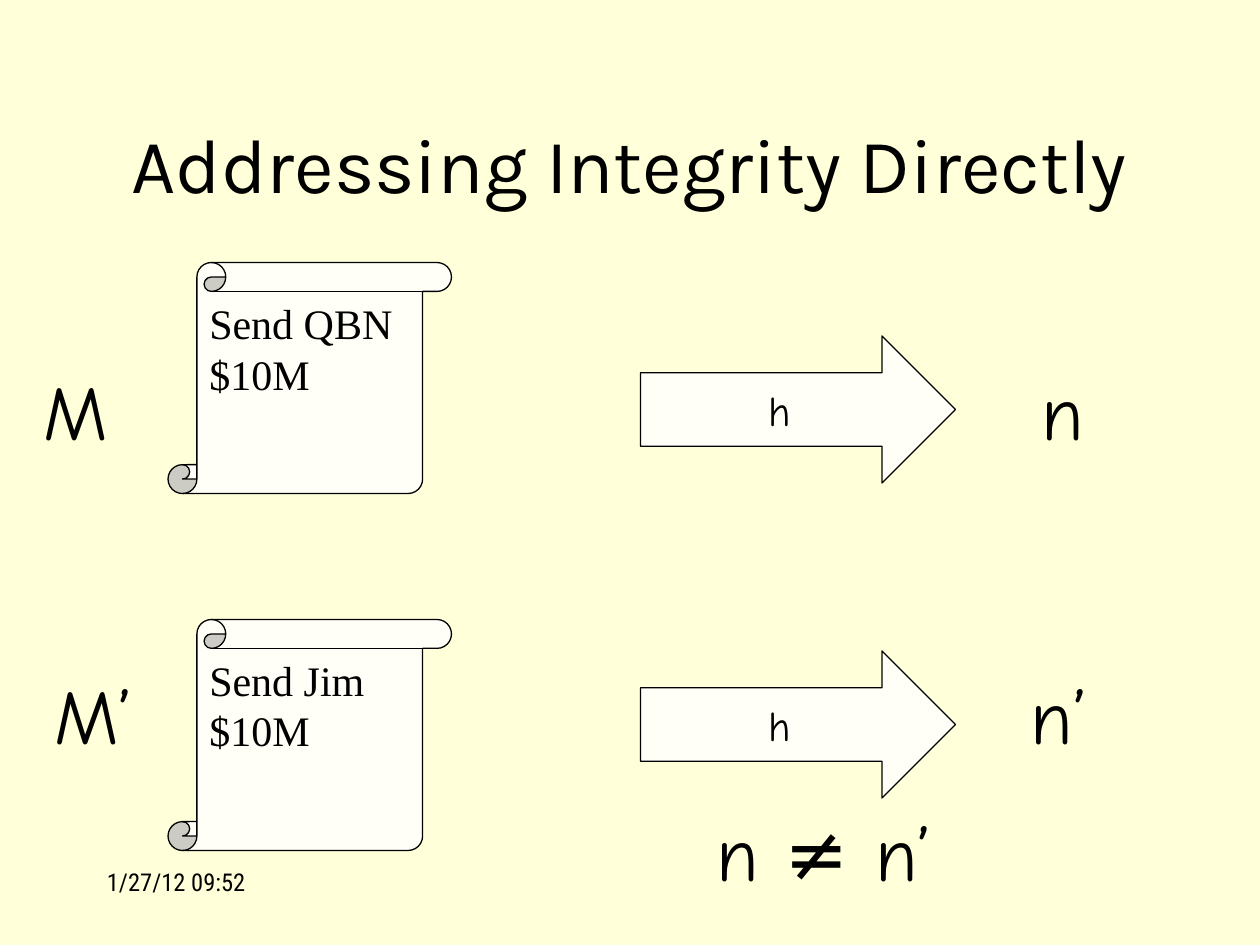
from pptx import Presentation
from pptx.dml.color import RGBColor
from pptx.enum.shapes import MSO_SHAPE
from pptx.enum.text import MSO_ANCHOR, MSO_AUTO_SIZE, PP_ALIGN
from pptx.util import Inches, Pt

CREAM = RGBColor(0xFF, 0xFF, 0xD9)
IVORY = RGBColor(0xFF, 0xFF, 0xF7)
BLACK = RGBColor(0x00, 0x00, 0x00)

prs = Presentation()
prs.slide_width, prs.slide_height = Inches(10), Inches(7.5)
COL = prs.slide_width // 120
ROW = prs.slide_height // 90


def cells(x, y, w, h):
    """Turn grid columns and rows into slide lengths."""
    return x * COL, y * ROW, w * COL, h * ROW


def write(sp, text, font="Comic Neue", size=44, align=PP_ALIGN.LEFT,
          anchor=MSO_ANCHOR.TOP, fit=MSO_AUTO_SIZE.NONE):
    tf = sp.text_frame
    tf.word_wrap = True
    tf.auto_size = fit
    tf.vertical_anchor = anchor
    p = tf.paragraphs[0]
    p.alignment = align
    r = p.add_run()
    r.text = text
    r.font.name, r.font.size = font, Pt(size)
    r.font.color.rgb = BLACK


s = prs.slides.add_slide(prs.slide_layouts[5])
s.background.fill.solid()
s.background.fill.fore_color.rgb = CREAM

# Title and date
title = s.shapes.title
title.left, title.top, title.width, title.height = cells(9, 8, 102, 15)
write(title, "Addressing Integrity Directly", font="Karla",
      align=PP_ALIGN.CENTER, anchor=MSO_ANCHOR.MIDDLE)
write(s.shapes.add_textbox(*cells(9, 82, 25, 6)), "1/27/12 09:52",
      font="Roboto Condensed", size=14)

# Message scrolls and hash arrows
serif = dict(font="Times New Roman", size=24)
hashed = dict(size=24, align=PP_ALIGN.CENTER, anchor=MSO_ANCHOR.MIDDLE)
for kind, box, text, style in [
    (MSO_SHAPE.VERTICAL_SCROLL, (16, 25, 27, 22), "Send QBN $10M", serif),
    (MSO_SHAPE.VERTICAL_SCROLL, (16, 59, 27, 22), "Send Jim $10M", serif),
    (MSO_SHAPE.RIGHT_ARROW, (61, 32, 30, 14), "h", hashed),
    (MSO_SHAPE.RIGHT_ARROW, (61, 62, 30, 14), "h", hashed),
]:
    sp = s.shapes.add_shape(kind, *cells(*box))
    sp.shadow.inherit = False
    sp.fill.solid()
    sp.fill.fore_color.rgb = IVORY
    sp.line.color.rgb = BLACK
    sp.line.width = Pt(0.75)
    write(sp, text, **style)

# Message and digest labels
for x, y, w, text, align in [
    (98, 34, 14, "n", PP_ALIGN.LEFT),
    (97, 63, 14, "n’", PP_ALIGN.LEFT),
    (59, 76, 39, "n ≠ n’", PP_ALIGN.CENTER),
    (3, 34, 14, "M", PP_ALIGN.LEFT),
    (4, 63, 14, "M’", PP_ALIGN.LEFT),
]:
    write(s.shapes.add_textbox(*cells(x, y, w, 10)), text, align=align,
          fit=MSO_AUTO_SIZE.SHAPE_TO_FIT_TEXT)

prs.save("out.pptx")
